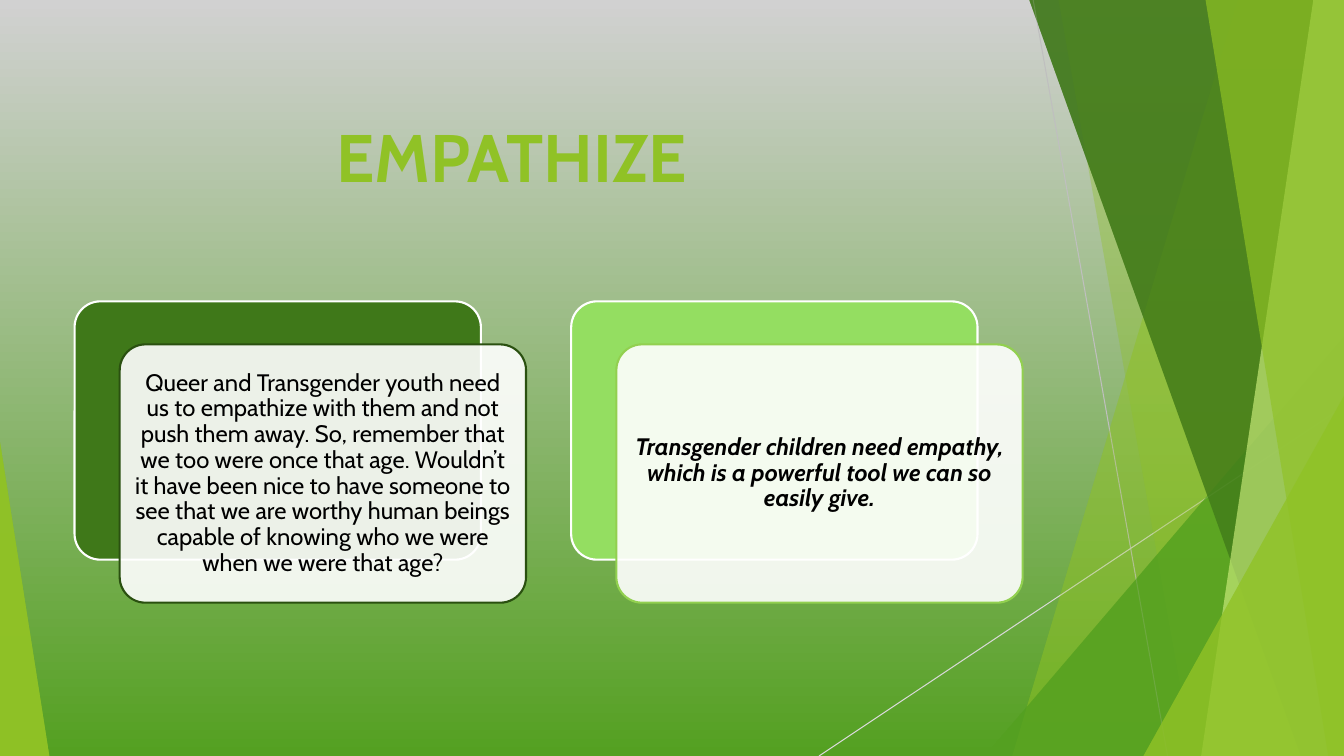
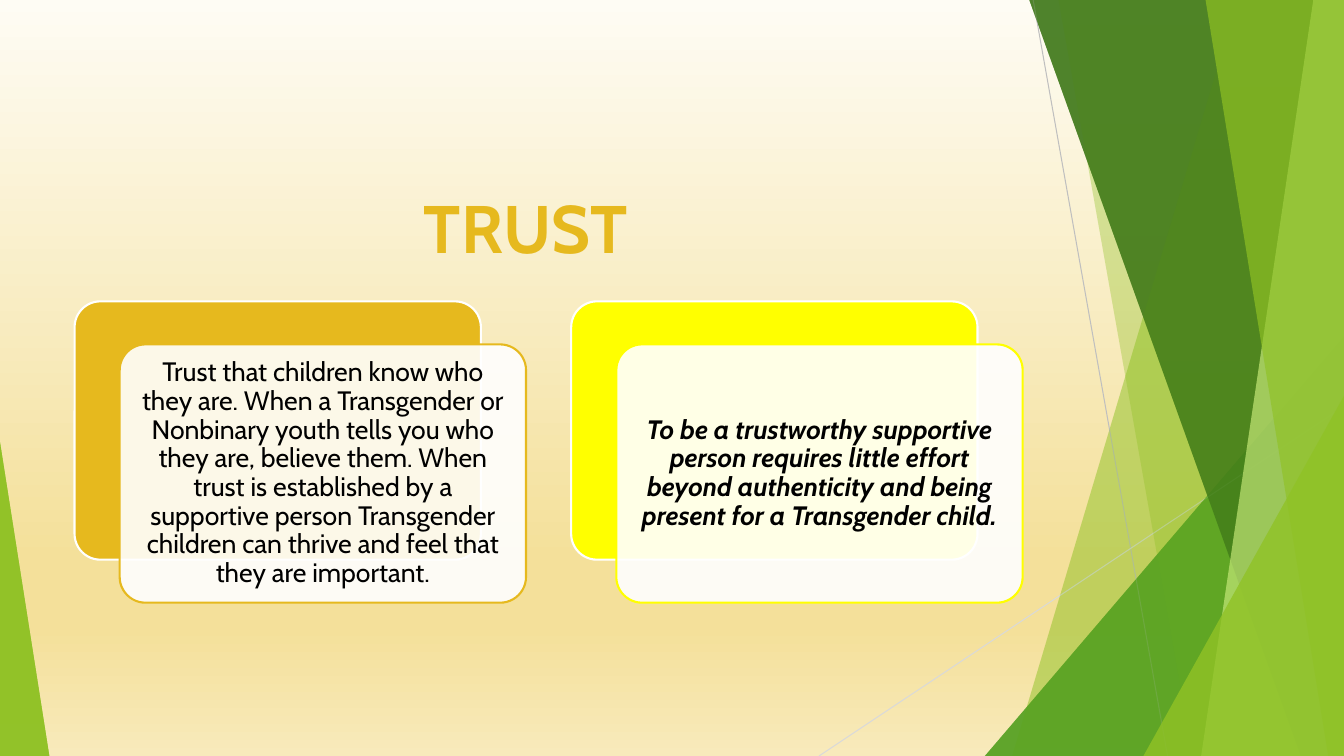
import pptx
import pptx.dml.color
import pptx.enum.shapes
import pptx.enum.text
import pptx.oxml
import pptx.oxml.ns
import pptx.util
from lxml import etree

PX = 9525
WIDTH, HEIGHT = 1280, 720
FONT = "Cabin"
COLOURS = {
    "lime": "90C226",
    "green": "54A021",
    "forest": "3F7819",
    "pine": "2A5010",
    "pale_lime": "C0E474",
    "mint": "94DE61",
    "leaf": "92D050",
    "gold": "E6B91E",
    "yellow": "FFFF00",
    "cream": "FEFCF4",
    "sand": "F4E09A",
    "light_sand": "F8EABB",
    "mist": "D1D1D1",
    "silver": "BFBFBF",
    "light_silver": "D9D9D9",
    "white": "FFFFFF",
    "black": "000000",
}

BANDS_AND_TRIANGLES = [
    ((1179, 964), "lime", 30),
    ((1008, 1136), "lime", 20),
    ((938, 320, 342, 400, 1), "green", 72),
    ((980, 1239), "forest", 70),
    ((1251, 1144), "pale_lime", 70),
    ((1148, 1265), "lime", 65),
    ((1089, 377, 191, 343, 1), "lime", 80),
    ((0, 421, 47, 299, 0), "lime", 85),
]
RAYS = [
    ((984, 0, 1112, 720), "silver"),
    ((1280, 387, 780, 720), "light_silver"),
]
CARD_LEFT, CARD_TOP, CARD_WIDTH, CARD_HEIGHT = 71, 287, 387, 246
CARD_STEP, FRONT_RIGHT, FRONT_DOWN = 473, 43, 41

SLIDES = [
    {
        "title": "EMPATHIZE",
        "title_box": (311, 105, 390, 138),
        "title_colour": "lime",
        "background": [(0, "mist"), (100, "green")],
        "size": 17,
        "inset": 7,
        "cards": [
            ("forest", "pine", "Queer and Transgender youth need us to empathize with them and not push them away. So, remember that we too were once that age. Wouldn’t it have been nice to have someone to see that we are worthy human beings capable of knowing who we were when we were that age?"),
            ("mint", "leaf", "Transgender children need empathy, which is a powerful tool we can so easily give."),
        ],
    },
    {
        "title": "TRUST",
        "title_box": (394, 173, 292, 138),
        "title_colour": "gold",
        "background": [(0, "cream"), (74, "sand"), (83, "sand"), (100, "light_sand")],
        "size": 19,
        "inset": 8,
        "cards": [
            ("gold", "gold", "Trust that children know who they are. When a Transgender or Nonbinary youth tells you who they are, believe them. When trust is established by a supportive person Transgender children can thrive and feel that they are important."),
            ("yellow", "yellow", "To be a trustworthy supportive person requires little effort beyond authenticity and being present for a Transgender child."),
        ],
    },
]


def rgb(name):
    return pptx.dml.color.RGBColor.from_string(COLOURS[name])


def paint(shape, fill, opacity=100, line=None):
    shape.shadow.inherit = False
    shape.fill.solid()
    shape.fill.fore_color.rgb = rgb(fill)
    if opacity < 100:
        colour = shape.element.spPr.find(pptx.oxml.ns.qn("a:solidFill"))[0]
        etree.SubElement(colour, pptx.oxml.ns.qn("a:alpha"), val=str(opacity * 1000))
    if line:
        shape.line.color.rgb = rgb(line)
        shape.line.width = pptx.util.Pt(1.5)
    else:
        shape.line.fill.background()


deck = pptx.Presentation()
deck.slide_width, deck.slide_height = WIDTH * PX, HEIGHT * PX
layout = deck.slide_layouts[5]
for holder in list(layout.placeholders)[1:]:
    holder.element.getparent().remove(holder.element)
pages = [deck.slides.add_slide(layout) for slide in SLIDES]

shapes = pages[0].shapes
decoration = []
for layer in range(2):
    for geometry, colour, opacity in BANDS_AND_TRIANGLES:
        if len(geometry) == 2:
            top_x, bottom_x = geometry
            outline = shapes.build_freeform(top_x, -1, scale=PX)
            outline.add_line_segments([(WIDTH, -1), (WIDTH, HEIGHT), (bottom_x, HEIGHT)])
            facet = outline.convert_to_shape()
        else:
            *place, apex = geometry
            facet = shapes.add_shape(
                pptx.enum.shapes.MSO_SHAPE.ISOSCELES_TRIANGLE, *[value * PX for value in place])
            facet.adjustments[0] = apex
        paint(facet, colour, opacity)
        decoration.append(facet)
    if layer == 0:
        for ends, colour in RAYS:
            ray = shapes.add_connector(
                pptx.enum.shapes.MSO_CONNECTOR.STRAIGHT, *[value * PX for value in ends])
            ray.line.color.rgb = rgb(colour)
            ray.line.width = pptx.util.Pt(0.75)
            etree.SubElement(ray.element.spPr, pptx.oxml.ns.qn("a:effectLst"))
            decoration.append(ray)
for item in decoration:
    layout.shapes.element.append(item.element)

for page, slide in zip(pages, SLIDES):
    background = page.background.fill
    background.gradient()
    background.gradient_angle = 270
    stops = page.element.find(".//" + pptx.oxml.ns.qn("a:gsLst"))
    for stop in list(stops):
        stops.remove(stop)
    for position, colour in slide["background"]:
        stop = etree.SubElement(stops, pptx.oxml.ns.qn("a:gs"), pos=str(position * 1000))
        etree.SubElement(stop, pptx.oxml.ns.qn("a:srgbClr"), val=COLOURS[colour])

    title = page.shapes.title
    title.left, title.top, title.width, title.height = [value * PX for value in slide["title_box"]]
    title.text_frame.text = slide["title"]
    title.text_frame.vertical_anchor = pptx.enum.text.MSO_ANCHOR.TOP
    title.text_frame.auto_size = pptx.enum.text.MSO_AUTO_SIZE.NONE
    para = title.text_frame.paragraphs[0]
    para.alignment = pptx.enum.text.PP_ALIGN.LEFT
    para.font.name = FONT
    para.font.size = pptx.util.Pt(48)
    para.font.bold = True
    para.font.color.rgb = rgb(slide["title_colour"])

    for index, (back_fill, front_line, text) in enumerate(slide["cards"]):
        left = CARD_LEFT + index * CARD_STEP
        for right, down, fill, opacity, line in [
            (0, 0, back_fill, 100, "white"),
            (FRONT_RIGHT, FRONT_DOWN, "white", 90, front_line),
        ]:
            card = page.shapes.add_shape(
                pptx.enum.shapes.MSO_SHAPE.ROUNDED_RECTANGLE,
                (left + right) * PX, (CARD_TOP + down) * PX, CARD_WIDTH * PX, CARD_HEIGHT * PX)
            card.adjustments[0] = 0.1
            paint(card, fill, opacity, line)

        frame = card.text_frame
        frame.word_wrap = True
        frame.vertical_anchor = pptx.enum.text.MSO_ANCHOR.MIDDLE
        frame.margin_left = frame.margin_right = slide["inset"] * PX
        frame.margin_top = frame.margin_bottom = slide["inset"] * PX
        frame.text = text
        para = frame.paragraphs[0]
        para.alignment = pptx.enum.text.PP_ALIGN.CENTER
        para.line_spacing = 0.9
        para.font.name = FONT
        para.font.size = pptx.util.Pt(slide["size"])
        para.font.bold = para.font.italic = index == 1
        para.font.color.rgb = rgb("black")

deck.save("out.pptx")
